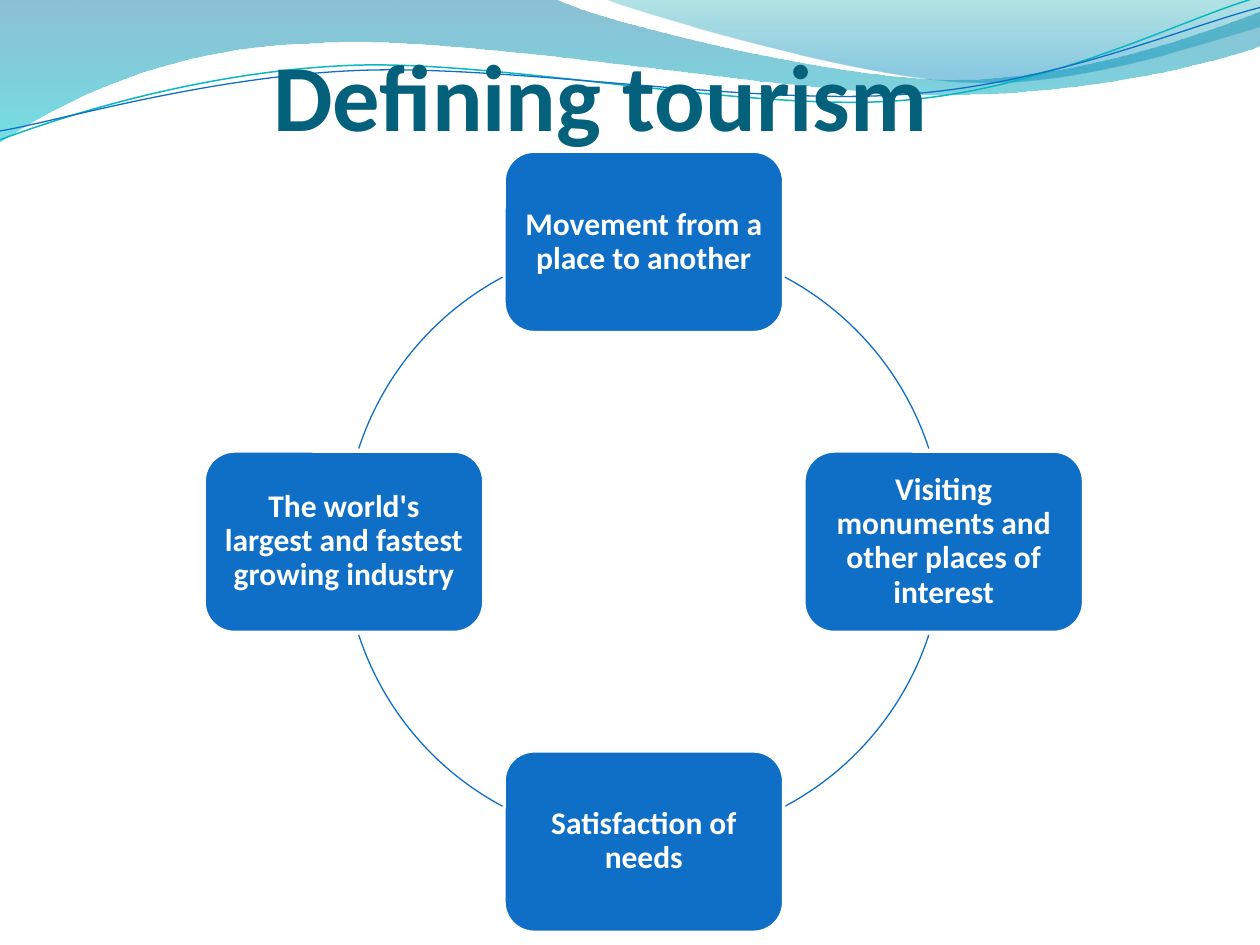
"""Build the "Defining tourism" slide: a wave banner above a cycle of four boxes."""
import lxml.etree
import pptx
import pptx.dml.color
import pptx.enum.shapes
import pptx.enum.text
import pptx.oxml.ns
import pptx.util

Inches, Pt = pptx.util.Inches, pptx.util.Pt
RGB = pptx.dml.color.RGBColor.from_string
qn = pptx.oxml.ns.qn
Kind = pptx.enum.shapes.MSO_SHAPE
Anchor = pptx.enum.text.MSO_ANCHOR
Align = pptx.enum.text.PP_ALIGN

HUES = {"blue": "0F6FC6", "teal": "0AB8BF", "title": "04617B", "white": "FFFFFF",
        "deep": "0074A1", "cyan": "00C6CF", "green": "00A1A9", "sky": "008BBF"}
FONT = "Calibri"


def trace(start, parts, close):
    """Draw an outline whose parts are line ends (2 numbers) or Bezier curves (6)."""
    dots = [(Inches(part[n]), Inches(part[n + 1]))
            for part in parts for n in range(0, len(part), 2)]
    pen = slide.shapes.build_freeform(Inches(start[0]), Inches(start[1]))
    pen.add_line_segments(dots, close=close)
    shape = pen.convert_to_shape()
    shape.shadow.inherit = False
    legs = iter(list(shape.element.iter(qn("a:lnTo"))))
    for part in parts:
        leg = next(legs)
        if len(part) == 6:
            curve = lxml.etree.Element(qn("a:cubicBezTo"))
            leg.addprevious(curve)
            for piece in (leg, next(legs), next(legs)):
                curve.append(piece[0])
                piece.getparent().remove(piece)
    return shape


def stroke(shape, hue, width):
    """Leave a shape unfilled and outline it."""
    shape.fill.background()
    shape.line.color.rgb = RGB(HUES[hue])
    shape.line.width = Pt(width)


deck = pptx.Presentation()
deck.slide_width, deck.slide_height = Inches(10), Inches(7.5)
slide = deck.slides.add_slide(deck.slide_layouts[5])

bands = [
    ((0, 0), [(4.4, -0.01), (4.76, 0.17, 6.64, 0.63, 7.58, 0.63),
              (8.53, 0.63, 9.58, 0.26, 10, 0.09), (10.01, 0.36),
              (9.83, 0.44, 8.7, 0.76, 7.46, 0.75), (6.22, 0.75, 3.82, 0.28, 2.57, 0.34),
              (1.29, 0.36, 0.46, 0.83, -0.01, 1.13)],
     [(0, "deep", 45), (1, "cyan", 55)]),
    ((4.79, -0.01), [(5.09, 0.11, 6.82, 0.62, 7.69, 0.65),
                     (8.56, 0.69, 9.61, 0.32, 10, 0.21), (10, 0)],
     [(0, "green", 30), (0.8, "sky", 45)]),
]
for start, parts, stops in bands:
    band = trace(start, parts, True)
    band.line.fill.background()
    band.fill.gradient()
    band.fill.gradient_angle = 270
    for stop, (place, hue, _) in zip(band.fill.gradient_stops, stops):
        stop.position = place
        stop.color.rgb = RGB(HUES[hue])
    for tint, (_, _, alpha) in zip(band.element.iter(qn("a:srgbClr")), stops):
        lxml.etree.SubElement(tint, qn("a:alpha")).set("val", str(alpha * 1000))

waves = [
    ((0, 1.11), [(0.48, 0.93, 1.58, 0.57, 2.77, 0.52), (3.95, 0.47, 5.93, 0.89, 7.13, 0.8),
                 (8.33, 0.71, 9.38, 0.15, 9.98, -0.02)], "teal", 0.85),
    ((0, 1.04), [(0.47, 0.96, 1.64, 0.61, 2.83, 0.56), (4.03, 0.51, 5.97, 0.84, 7.17, 0.75),
                 (8.36, 0.67, 9.41, 0.21, 10, 0.06)], "blue", 0.75),
]
for start, parts, hue, width in waves:
    stroke(trace(start, parts, False), hue, width)

title = slide.shapes.title
title.element.getparent().append(title.element)
title.left, title.top, title.width, title.height = map(Inches, (2.17, -0.06, 9, 1.25))
frame = title.text_frame
frame.text = "Defining tourism"
frame.auto_size = pptx.enum.text.MSO_AUTO_SIZE.NONE
frame.vertical_anchor = Anchor.BOTTOM
frame.margin_left = frame.margin_right = frame.margin_bottom = 0
frame.margin_top = Inches(0.05)
line = frame.paragraphs[0]
line.alignment = Align.LEFT
line.font.name, line.font.size, line.font.bold = FONT, Pt(54), True
line.font.color.rgb = RGB(HUES["title"])

midx, midy, reach = 5.11, 4.3, 2.38
wide, high, sweep = 2.22, 1.44, 21.9
cycle = [
    ("Movement from a place to another", 0, -1, 320),
    ("Visiting monuments and other places of interest", 1, 0, 40),
    ("Satisfaction of needs", 0, 1, 140),
    ("The world's largest and fastest growing industry", -1, 0, 220),
]
for text, dx, dy, angle in cycle:
    box = slide.shapes.add_shape(
        Kind.ROUNDED_RECTANGLE, Inches(midx + dx * reach - wide / 2),
        Inches(midy + dy * reach - high / 2), Inches(wide), Inches(high))
    box.shadow.inherit = False
    box.fill.solid()
    box.fill.fore_color.rgb = RGB(HUES["blue"])
    box.line.color.rgb = RGB(HUES["white"])
    box.line.width = Pt(2)
    frame = box.text_frame
    frame.text = text
    frame.word_wrap = True
    frame.vertical_anchor = Anchor.MIDDLE
    frame.margin_left = frame.margin_right = Inches(0.07)
    frame.margin_top = frame.margin_bottom = Inches(0.07)
    line = frame.paragraphs[0]
    line.alignment, line.line_spacing = Align.CENTER, 0.9
    line.font.name, line.font.size, line.font.bold = FONT, Pt(18), True
    line.font.color.rgb = RGB(HUES["white"])

    arc = slide.shapes.add_shape(
        Kind.ARC, Inches(midx - reach), Inches(midy - reach),
        Inches(2 * reach), Inches(2 * reach))
    arc.shadow.inherit = False
    arc.adjustments[0] = (angle - sweep) * 0.6
    arc.adjustments[1] = (angle + sweep) * 0.6
    stroke(arc, "blue", 0.75)

deck.save("out.pptx")
